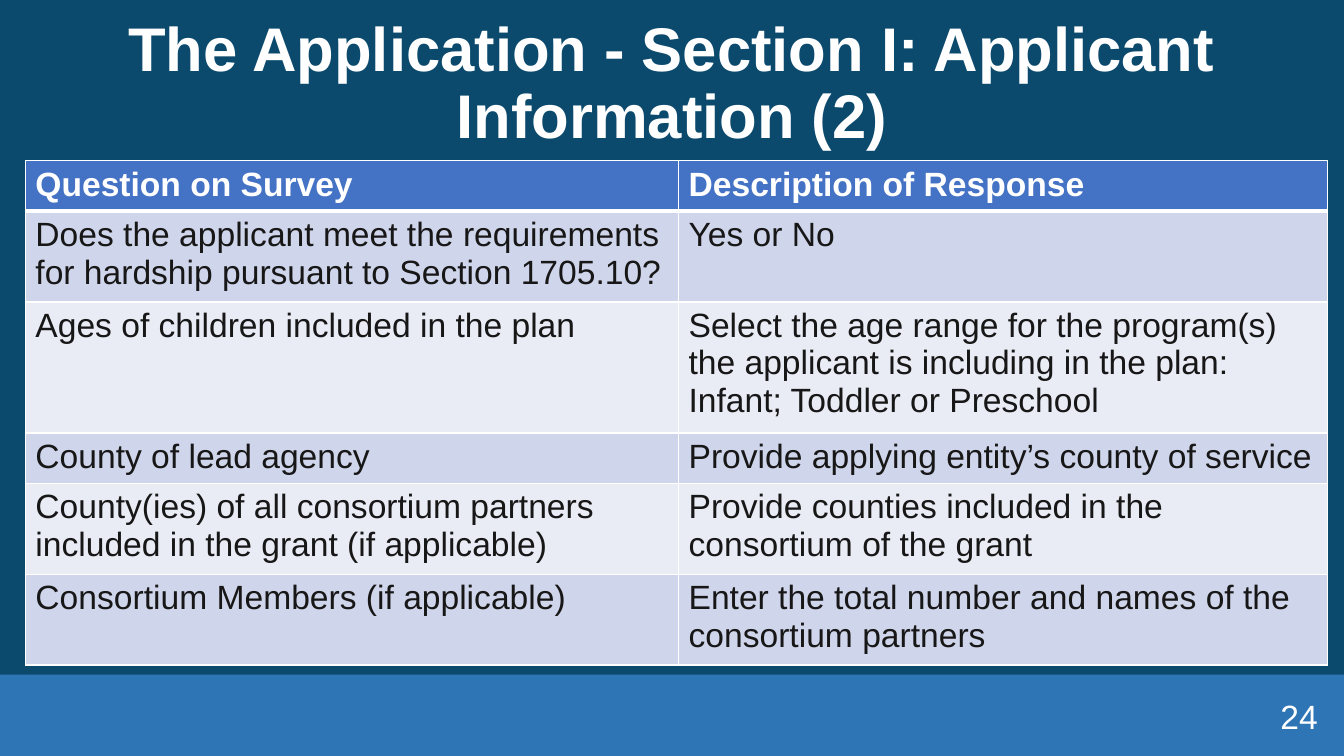
from pptx import Presentation
from pptx.dml.color import RGBColor
from pptx.enum.shapes import MSO_SHAPE
from pptx.enum.text import MSO_ANCHOR, MSO_AUTO_SIZE, PP_ALIGN
from pptx.oxml import parse_xml
from pptx.oxml.ns import nsdecls
from pptx.util import Cm, Pt

NAVY, BLUE, WHITE, INK = "0C4A6D", "2E75B6", "FFFFFF", "181717"
HEADER_FILL, BAND_FILLS = "4472C4", ("E9EBF5", "CFD5EA")

TITLE = "The Application - Section I: Applicant Information (2)"
SURVEY_ROWS = [
    ("Question on Survey", "Description of Response"),
    ("Does the applicant meet the requirements for hardship pursuant to Section 1705.10?",
     "Yes or No"),
    ("Ages of children included in the plan",
     "Select the age range for the program(s) the applicant is including in the plan: "
     "Infant; Toddler or Preschool"),
    ("County of lead agency", "Provide applying entity’s county of service"),
    ("County(ies) of all consortium partners included in the grant (if applicable)",
     "Provide counties included in the consortium of the grant"),
    ("Consortium Members (if applicable)",
     "Enter the total number and names of the consortium partners"),
]
ROW_HEIGHTS = (1.2, 2.14, 3.08, 1.2, 2.22, 2.22)
COLUMN_WIDTHS = (16.46, 16.36)


def color(hex_string):
    return RGBColor.from_string(hex_string)


def format_text(text_frame, size, hex_string, bold=False, alignment=PP_ALIGN.LEFT):
    for paragraph in text_frame.paragraphs:
        paragraph.alignment = alignment
        for run in paragraph.runs:
            run.font.name = "Arial"
            run.font.size = Pt(size)
            run.font.bold = bold
            run.font.color.rgb = color(hex_string)


def add_title(slide, left, top, width, height):
    title = slide.shapes.title
    title.left, title.top, title.width, title.height = map(Cm, (left, top, width, height))
    text_frame = title.text_frame
    text_frame.text = TITLE
    text_frame.word_wrap = True
    text_frame.auto_size = MSO_AUTO_SIZE.NONE
    text_frame.vertical_anchor = MSO_ANCHOR.MIDDLE
    text_frame.paragraphs[0].line_spacing = 0.9
    format_text(text_frame, 44, WHITE, True, PP_ALIGN.CENTER)


def set_borders(cell, top_width, bottom_width):
    """Draw white borders; the sides are always 1 pt."""
    properties = cell._tc.get_or_add_tcPr()
    for side, width in (("L", 1), ("R", 1), ("T", top_width), ("B", bottom_width)):
        properties.append(parse_xml(
            f'<a:ln{side} {nsdecls("a")} w="{Pt(width)}"><a:solidFill>'
            f'<a:srgbClr val="{WHITE}"/></a:solidFill></a:ln{side}>'))


def add_survey_table(slide, left, top):
    frame = slide.shapes.add_table(
        len(SURVEY_ROWS), len(COLUMN_WIDTHS), Cm(left), Cm(top),
        Cm(sum(COLUMN_WIDTHS)), Cm(sum(ROW_HEIGHTS)))
    table = frame.table
    for column, width in zip(table.columns, COLUMN_WIDTHS):
        column.width = Cm(width)
    for index, (row, texts) in enumerate(zip(table.rows, SURVEY_ROWS)):
        row.height = Cm(ROW_HEIGHTS[index])
        header = index == 0
        for cell, text in zip(row.cells, texts):
            cell.text_frame.text = text
            format_text(cell.text_frame, 24, WHITE if header else INK, header)
            set_borders(cell, 3 if index == 1 else 1, 3 if header else 1)
            cell.fill.solid()
            cell.fill.fore_color.rgb = color(HEADER_FILL if header else BAND_FILLS[index % 2])


def add_footer(slide, left, top, width, height):
    """Add the bottom band with the page number at its right end."""
    band = slide.shapes.add_shape(
        MSO_SHAPE.RECTANGLE, Cm(left), Cm(top), Cm(width), Cm(height))
    band.shadow.inherit = False
    band.fill.solid()
    band.fill.fore_color.rgb = color(BLUE)
    band.line.fill.background()

    number = slide.shapes.add_textbox(
        Cm(left + width - 8.03), Cm(top + 0.53), Cm(7.62), Cm(1.01))
    text_frame = number.text_frame
    text_frame.word_wrap = True
    text_frame.vertical_anchor = MSO_ANCHOR.MIDDLE
    text_frame.text = "24"
    format_text(text_frame, 24, WHITE, alignment=PP_ALIGN.RIGHT)


def main():
    presentation = Presentation()
    presentation.slide_width, presentation.slide_height = Cm(33.87), Cm(19.05)
    slide = presentation.slides.add_slide(presentation.slide_layouts[5])
    slide.background.fill.solid()
    slide.background.fill.fore_color.rgb = color(NAVY)
    add_footer(slide, 0, 17, 33.87, 2.05)
    add_title(slide, 0.43, 0.03, 33.02, 4.22)
    add_survey_table(slide, 0.64, 4.05)
    presentation.save("out.pptx")


if __name__ == "__main__":
    main()
